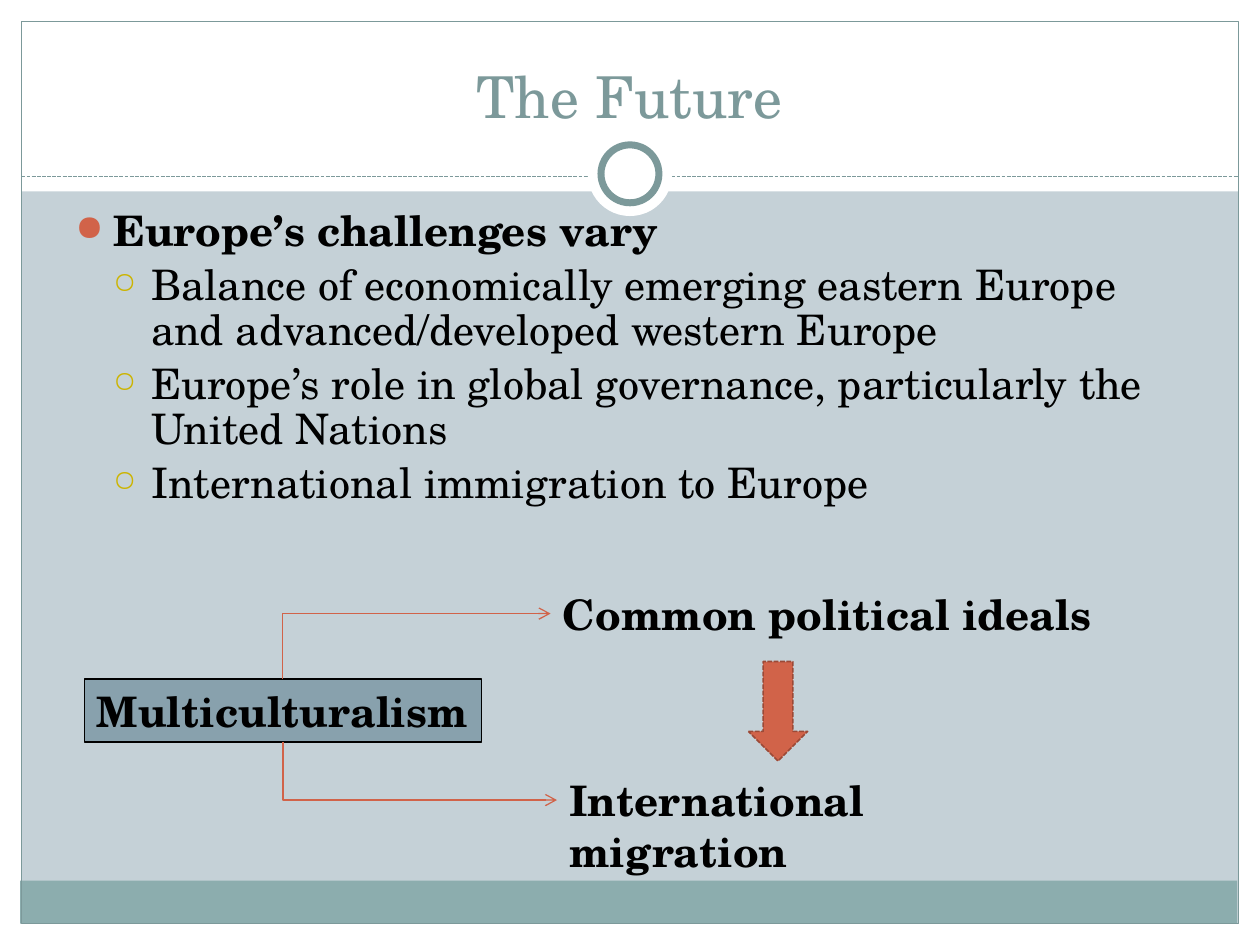
from lxml import etree
from pptx import Presentation
from pptx import util as u
from pptx.dml.color import RGBColor
from pptx.enum import dml, shapes, text
from pptx.oxml.ns import qn

COLORS = {
    "background": "C5D1D7", "white": "FFFFFF", "footer": "8CADAE", "trim": "7C999A",
    "black": "000000", "accent": "D16349", "gold": "CCB400", "box": "88A1AD",
    "arrow_edge": "9B4936",
}
FONT = "TeX Gyre Schola"
WIDTH, HEIGHT, MARGIN = 10, 7.5, 0.17

TITLE = "The Future"
CHALLENGES = [
    (0, "Europe’s challenges vary"),
    (1, "Balance of economically emerging eastern Europe and advanced/developed western Europe"),
    (1, "Europe’s role in global governance, particularly the United Nations"),
    (1, "International immigration to Europe"),
]
BULLETS = [("●", "accent", 85), ("○", "gold", 70)]
SOURCE = ("Multiculturalism", (0.67, 5.39, 3.15, 0.5))
OUTCOMES = [
    ("Common political ideals", (4.37, 4.62, 4.4, 0.5), False),
    ("International migration", (4.42, 6.1, 4.34, 0.5), True),
]
BANDS = [
    ((0, HEIGHT - MARGIN, WIDTH, MARGIN), "white"),
    ((0, 0, WIDTH, 1.52), "white"),
    ((0, 0, MARGIN, HEIGHT), "white"),
    ((WIDTH - MARGIN, 0, MARGIN, HEIGHT), "white"),
    ((0.16, 6.99, 9.66, 0.34), "footer"),
]

prs = Presentation()
prs.slide_width, prs.slide_height = u.Inches(WIDTH), u.Inches(HEIGHT)
slide = prs.slides.add_slide(prs.slide_layouts[6])


def rgb(name):
    return RGBColor.from_string(COLORS[name])


def inches(values):
    return [u.Inches(value) for value in values]


def style_line(line, color, width, dashed=False):
    line.color.rgb = rgb(color)
    line.width = u.Pt(width)
    if dashed:
        line.dash_style = dml.MSO_LINE.SQUARE_DOT


def add_block(kind, place, fill=None, line=None, width=0.75, dashed=False):
    block = slide.shapes.add_shape(kind, *inches(place))
    block.shadow.inherit = False
    if fill:
        block.fill.solid()
        block.fill.fore_color.rgb = rgb(fill)
    else:
        block.fill.background()
    if line:
        style_line(block.line, line, width, dashed)
    else:
        block.line.fill.background()
    return block


def add_line(kind, start, end, color, dashed=False):
    line = slide.shapes.add_connector(kind, *inches(start + end))
    style_line(line.line, color, 0.75, dashed)
    etree.SubElement(line._element.spPr, qn("a:effectLst"))
    return line


def add_bullet(paragraph, level):
    char, color, size = BULLETS[level]
    props = paragraph._p.get_or_add_pPr()
    props.set("marL", str(u.Inches(0.3 * (level + 1))))
    props.set("indent", str(u.Inches(-0.3)))
    bullet_color = etree.SubElement(props, qn("a:buClr"))
    etree.SubElement(bullet_color, qn("a:srgbClr"), val=COLORS[color])
    etree.SubElement(props, qn("a:buSzPct"), val=str(size * 1000))
    etree.SubElement(props, qn("a:buChar"), char=char)


def write(holder, lines, size=24, color="black", bold=True, align=text.PP_ALIGN.LEFT,
          anchor=text.MSO_ANCHOR.TOP, wrap=True, bulleted=False):
    frame = holder.text_frame
    frame.word_wrap = wrap
    frame.vertical_anchor = anchor
    for index, (level, words) in enumerate(lines):
        paragraph = frame.paragraphs[0] if index == 0 else frame.add_paragraph()
        paragraph.alignment = align
        paragraph.level = level
        if bulleted:
            add_bullet(paragraph, level)
            paragraph.line_spacing = 0.9
            if index:
                paragraph.space_before = u.Pt(size * 0.2)
        run = paragraph.add_run()
        run.text = words
        run.font.name, run.font.size = FONT, u.Pt(size)
        run.font.bold = bold and level == 0
        run.font.color.rgb = rgb(color)


def add_branch(start, end):
    (x1, y1), (x2, y2) = start, end
    mid_x, mid_y = (x1 + x2) / 2, (y1 + y2) / 2
    half_rise, half_run = abs(y2 - y1) / 2, (x2 - x1) / 2
    upward = y2 < y1
    side = half_run if upward else -half_run
    branch = add_line(shapes.MSO_CONNECTOR.ELBOW, (mid_x + half_rise, mid_y + side),
                      (mid_x - half_rise, mid_y - side), "accent")
    props = branch._element.spPr
    props.find(qn("a:xfrm")).set("rot", str((90 if upward else 270) * 60000))
    props.find(qn("a:prstGeom")).set("prst", "bentConnector2")
    etree.SubElement(props.find(qn("a:ln")), qn("a:tailEnd"), type="arrow")


slide.background.fill.solid()
slide.background.fill.fore_color.rgb = rgb("background")

RECT, OVAL = shapes.MSO_SHAPE.RECTANGLE, shapes.MSO_SHAPE.OVAL
for place, fill in BANDS:
    add_block(RECT, place, fill)
add_block(RECT, (MARGIN, MARGIN, WIDTH - 2 * MARGIN, HEIGHT - 2 * MARGIN), line="trim")
add_line(shapes.MSO_CONNECTOR.STRAIGHT, (MARGIN, 1.4), (WIDTH - MARGIN, 1.4), "trim", dashed=True)
for diameter, ring in ((0.67, None), (0.46, "trim")):
    add_block(OVAL, ((WIDTH - diameter) / 2, 1.38 - diameter / 2, diameter, diameter),
              "white", ring, width=4)

title = slide.shapes.add_textbox(*inches((0.33, 0.25, 9.33, 0.83)))
write(title, [(0, TITLE)], size=33, color="trim", bold=False,
      align=text.PP_ALIGN.CENTER, anchor=text.MSO_ANCHOR.BOTTOM)
challenges = slide.shapes.add_textbox(*inches((0.5, 1.62, 8.75, 3.07)))
write(challenges, CHALLENGES, bulleted=True)

source_label, source_place = SOURCE
left, top, width, height = source_place
source = add_block(RECT, source_place, "box", "black")
write(source, [(0, source_label)], wrap=False)

for label, place, wrap in OUTCOMES:
    outcome = slide.shapes.add_textbox(*inches(place))
    write(outcome, [(0, label)], wrap=wrap)
    target_y = place[1] + place[3] / 2
    edge = top if target_y < top else top + height
    add_branch((left + width / 2, edge), (place[0], target_y))

add_block(shapes.MSO_SHAPE.DOWN_ARROW, (5.94, 5.25, 0.47, 0.79), "accent", "arrow_edge",
          width=0.9, dashed=True)

prs.save("out.pptx")
